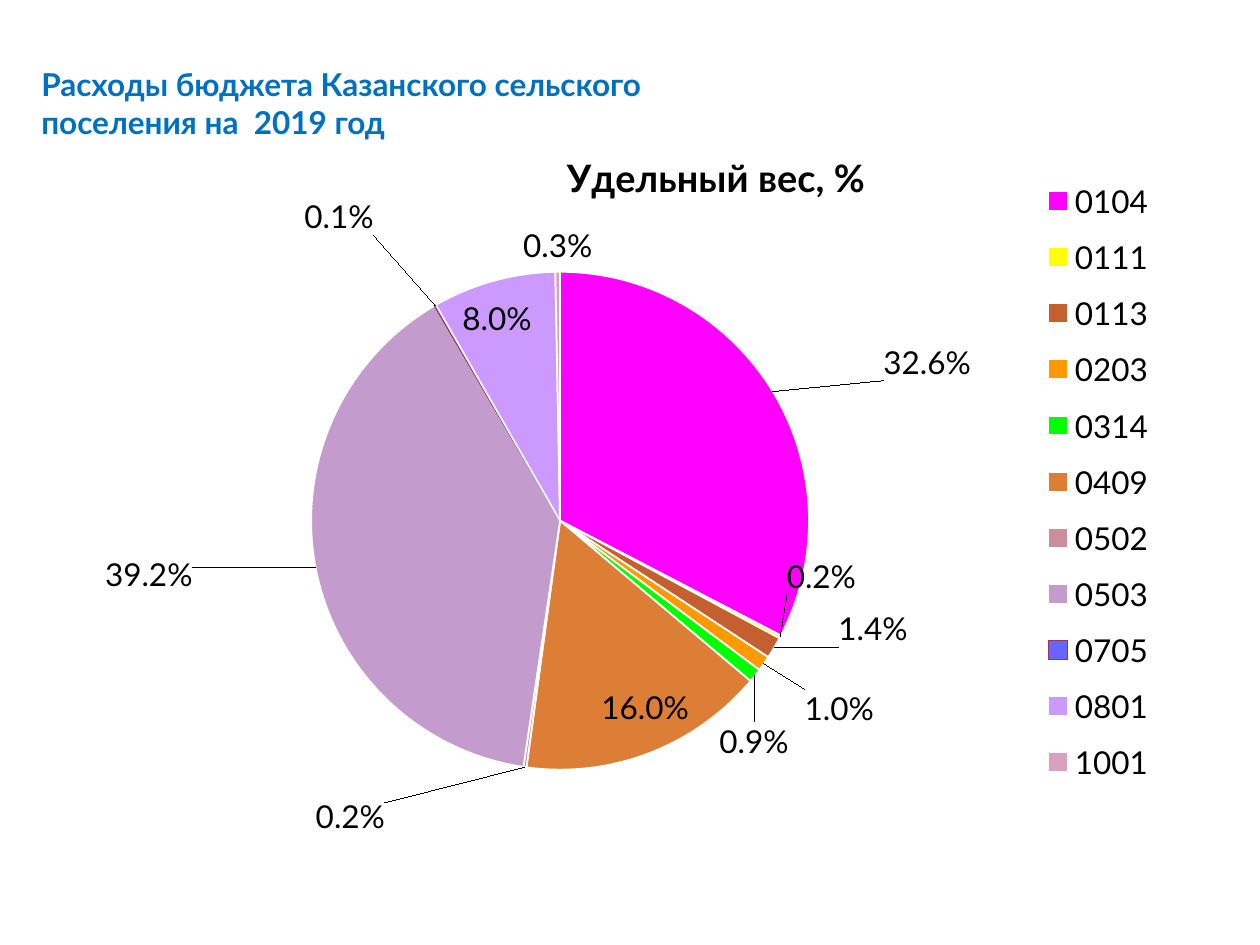
"""Build a slide with a pie chart of a rural settlement's budget spending."""
from lxml import etree
from pptx import Presentation
from pptx.chart.data import CategoryChartData
from pptx.dml.color import RGBColor
from pptx.enum.chart import XL_CHART_TYPE, XL_LABEL_POSITION, XL_LEGEND_POSITION
from pptx.enum.text import MSO_AUTO_SIZE
from pptx.oxml.ns import qn
from pptx.util import Inches, Pt

PIE = XL_CHART_TYPE.PIE
BEST_FIT = XL_LABEL_POSITION.BEST_FIT
OUTSIDE_END = XL_LABEL_POSITION.OUTSIDE_END
LEGEND_RIGHT = XL_LEGEND_POSITION.RIGHT
GROW = MSO_AUTO_SIZE.SHAPE_TO_FIT_TEXT

FONT = "Lato"
PERCENT = "0.0%"
COLORS = {
    "heading": "0070C0", "text": "000000", "edge": "FFFFFF", "thin edge": "993366",
    "0104": "FF00FF", "0111": "FFFF00", "0113": "C55F2F", "0203": "FF9900",
    "0314": "00FF00", "0409": "DD7E36", "0502": "CB8E9E", "0503": "C49BCD",
    "0705": "6666FF", "0801": "CC99FF", "1001": "D9A0BF",
}
SHARES = {
    "0104": 0.326, "0111": 0.002, "0113": 0.014, "0203": 0.01, "0314": 0.009,
    "0409": 0.16, "0502": 0.002, "0503": 0.392, "0705": 0.001, "0801": 0.08,
    "1001": 0.003,
}
LABEL_OFFSETS = {
    "0104": (0.09, -0.01), "0113": (0.05, -0.06), "0203": (0.03, 0.03),
    "0502": (-0.12, 0.04), "0503": (-0.1, -0.02), "0705": (-0.05, -0.09),
}


def set_layout(parent, index, **values):
    for old in parent.findall(qn("c:layout")):
        parent.remove(old)
    layout = etree.Element(qn("c:layout"))
    manual = etree.SubElement(layout, qn("c:manualLayout"))
    for name, value in values.items():
        etree.SubElement(manual, qn(f"c:{name}")).set("val", str(value))
    parent.insert(index, layout)


def style_font(font, **values):
    font.color.rgb = RGBColor.from_string(values.pop("color"))
    for name, value in values.items():
        setattr(font, name, value)


presentation = Presentation()
presentation.slide_width = Inches(10)
presentation.slide_height = Inches(7.5)
slide = presentation.slides.add_slide(presentation.slide_layouts[6])

chart_data = CategoryChartData(number_format=PERCENT)
chart_data.categories = list(SHARES)
chart_data.add_series("Удельный вес, %", list(SHARES.values()))
chart = slide.shapes.add_chart(
    PIE, Inches(0.31), Inches(1.02), Inches(9.19), Inches(5.61), chart_data
).chart
style_font(chart.font, name=FONT, size=Pt(18), color=COLORS["text"])

chart.has_title = True
title_frame = chart.chart_title.text_frame
title_frame.text = "Удельный вес, %"
title_font = title_frame.paragraphs[0].runs[0].font
style_font(title_font, name=FONT, size=Pt(21.6), bold=True, color=COLORS["text"])
title = title_frame._txBody.getparent().getparent()
set_layout(title, 1, xMode="edge", yMode="edge", x=0.45, y=0.02)

chart.has_legend = True
legend = chart.legend
legend.position = LEGEND_RIGHT
legend.include_in_layout = False
style_font(legend.font, name=FONT, size=Pt(18), color=COLORS["text"])
set_layout(legend._element, 1, xMode="edge", yMode="edge", x=0.86, y=0.05, w=0.11, h=0.9)

plot = chart.plots[0]
plot.vary_by_categories = True
set_layout(
    plot._element.getparent(), 0, layoutTarget="inner", xMode="edge", yMode="edge",
    x=0.235, y=0.2, w=0.43, h=0.71,
)

series = plot.series[0]
labels = series.data_labels
labels.show_value = True
labels.number_format = PERCENT
labels.number_format_is_linked = False
labels.position = BEST_FIT
style_font(labels.font, name=FONT, size=Pt(18), color=COLORS["text"])

for index, code in enumerate(SHARES):
    point = series.points[index]
    point.format.fill.solid()
    point.format.fill.fore_color.rgb = RGBColor.from_string(COLORS[code])
    edge = "thin edge" if code == "0705" else "edge"
    point.format.line.color.rgb = RGBColor.from_string(COLORS[edge])
    point.format.line.width = Pt(1)
    if code in LABEL_OFFSETS:
        label = point.data_label
        label.position = OUTSIDE_END
        style_font(label.font, name=FONT, size=Pt(18), color=COLORS["text"])
        label_element = labels._element.findall(qn("c:dLbl"))[-1]
        x, y = LABEL_OFFSETS[code]
        set_layout(label_element, 1, x=x, y=y)
        number_format = etree.Element(qn("c:numFmt"), formatCode=PERCENT, sourceLinked="0")
        label_element.insert(2, number_format)

heading = slide.shapes.add_textbox(Inches(0.23), Inches(0.47), Inches(5.86), Inches(0.71))
heading_frame = heading.text_frame
heading_frame.word_wrap = True
heading_frame.auto_size = GROW
paragraph = heading_frame.paragraphs[0]
paragraph.text = "Расходы бюджета Казанского сельского поселения на  2019 год"
style_font(paragraph.runs[0].font, name=FONT, size=Pt(18), bold=True, color=COLORS["heading"])

presentation.save("out.pptx")
